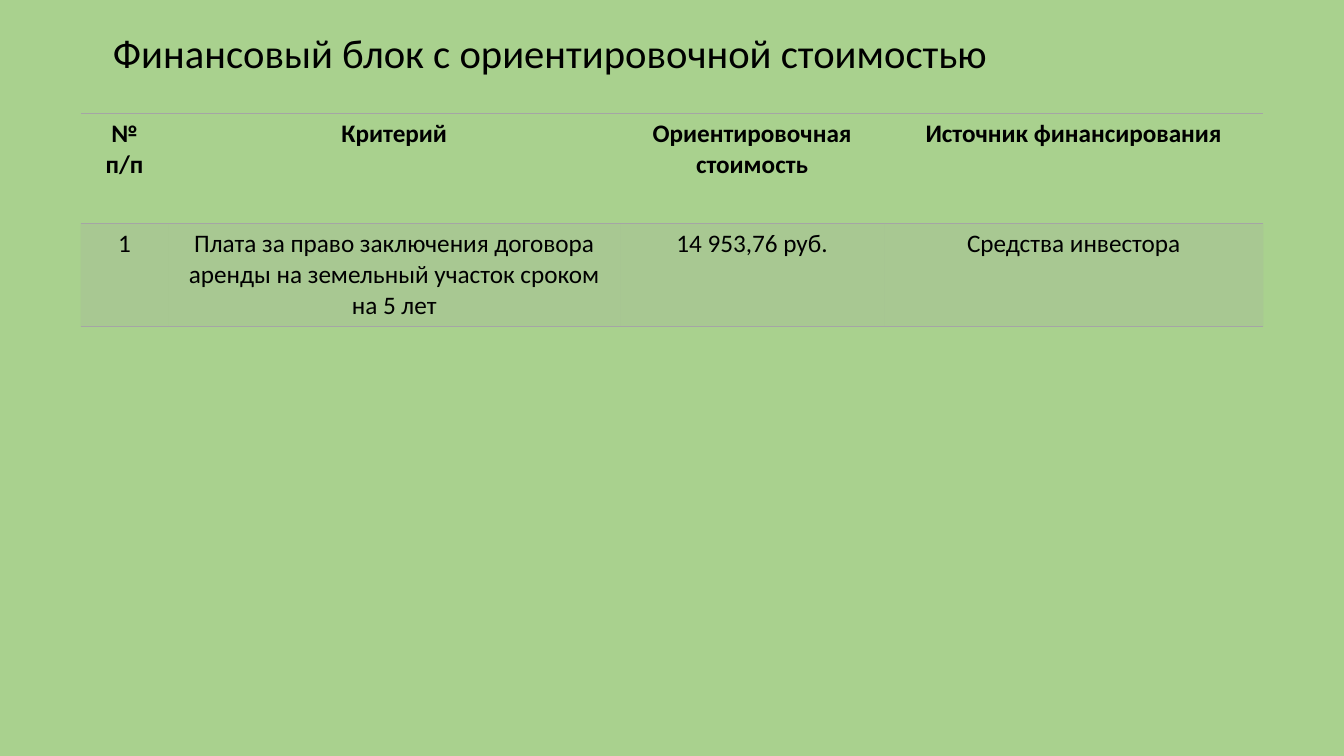
from lxml import etree
from pptx import Presentation
from pptx.dml.color import RGBColor
from pptx.enum.text import MSO_ANCHOR, MSO_AUTO_SIZE, PP_ALIGN
from pptx.oxml.ns import qn
from pptx.util import Inches, Pt

LEFT, CENTER = PP_ALIGN.LEFT, PP_ALIGN.CENTER
MIDDLE, TOP = MSO_ANCHOR.MIDDLE, MSO_ANCHOR.TOP
NO_AUTOFIT = MSO_AUTO_SIZE.NONE
TITLE_ONLY = 5
FONT, GREEN, GRAY, BLACK = "Calibri", "A9D18E", "A5A5A5", "000000"
BAND_OPACITY = 20
COLUMN_WIDTHS = (0.87, 4.48, 2.62, 3.76)
ROW_HEIGHTS = (1.09, 1.02)
TITLE = "Финансовый блок с ориентировочной стоимостью"
COST_ROWS = (
    ("№ п/п", "Критерий", "Ориентировочная стоимость", "Источник финансирования"),
    ("1", "Плата за право заключения договора аренды на земельный участок сроком на 5 лет",
     "14 953,76 руб.", "Средства инвестора"),
)


def color(value):
    """Turn a hex string into a colour."""
    return RGBColor.from_string(value)


def write(frame, text, size=18, bold=False, align=CENTER, spacing=1.0):
    """Put one formatted paragraph into a text frame."""
    frame.word_wrap = True
    para = frame.paragraphs[0]
    para.alignment, para.line_spacing = align, spacing
    span = para.add_run()
    span.text = text
    span.font.name, span.font.size, span.font.bold = FONT, Pt(size), bold
    span.font.color.rgb = color(BLACK)


def set_borders(cell):
    """Rule a cell above and below and leave its sides open."""
    properties = cell._tc.get_or_add_tcPr()
    for index, side in enumerate(("lnL", "lnR", "lnT", "lnB")):
        line = etree.Element(qn(f"a:{side}"), w=str(Pt(1)))
        if side in ("lnT", "lnB"):
            fill = etree.SubElement(line, qn("a:solidFill"))
            etree.SubElement(fill, qn("a:srgbClr"), val=GRAY)
        else:
            etree.SubElement(line, qn("a:noFill"))
        properties.insert(index, line)


def fill_band(cell):
    """Give a cell the translucent gray band."""
    cell.fill.solid()
    cell.fill.fore_color.rgb = color(GRAY)
    tint = cell._tc.tcPr.find(qn("a:solidFill")).find(qn("a:srgbClr"))
    etree.SubElement(tint, qn("a:alpha"), val=str(BAND_OPACITY * 1000))


def place_title(page, left, top, width, height):
    """Place the slide title in its box."""
    title = page.shapes.title
    title.left, title.top, title.width, title.height = map(Inches, (left, top, width, height))
    frame = title.text_frame
    frame.auto_size, frame.vertical_anchor = NO_AUTOFIT, MIDDLE
    write(frame, TITLE, size=29, align=LEFT, spacing=0.9)


def place_cost_table(page, left, top):
    """Place the cost table with its top left corner at the given point."""
    box = page.shapes.add_table(
        len(ROW_HEIGHTS), len(COLUMN_WIDTHS), Inches(left), Inches(top),
        Inches(sum(COLUMN_WIDTHS)), Inches(sum(ROW_HEIGHTS)))
    table = box.table
    table.first_row = table.horz_banding = False
    for column, width in zip(table.columns, COLUMN_WIDTHS):
        column.width = Inches(width)
    for row_index, (row, height) in enumerate(zip(table.rows, ROW_HEIGHTS)):
        row.height = Inches(height)
        is_header = row_index == 0
        for cell, text in zip(row.cells, COST_ROWS[row_index]):
            cell.vertical_anchor = TOP
            write(cell.text_frame, text, bold=is_header)
            if is_header:
                cell.fill.background()
            else:
                fill_band(cell)
            set_borders(cell)


def main():
    """Build and save the deck."""
    deck = Presentation()
    deck.slide_width, deck.slide_height = Inches(13.33), Inches(7.5)
    page = deck.slides.add_slide(deck.slide_layouts[TITLE_ONLY])
    page.background.fill.solid()
    page.background.fill.fore_color.rgb = color(GREEN)
    place_title(page, 1.02, 0.13, 11.5, 0.84)
    place_cost_table(page, 0.8, 1.13)
    deck.save("out.pptx")


if __name__ == "__main__":
    main()
